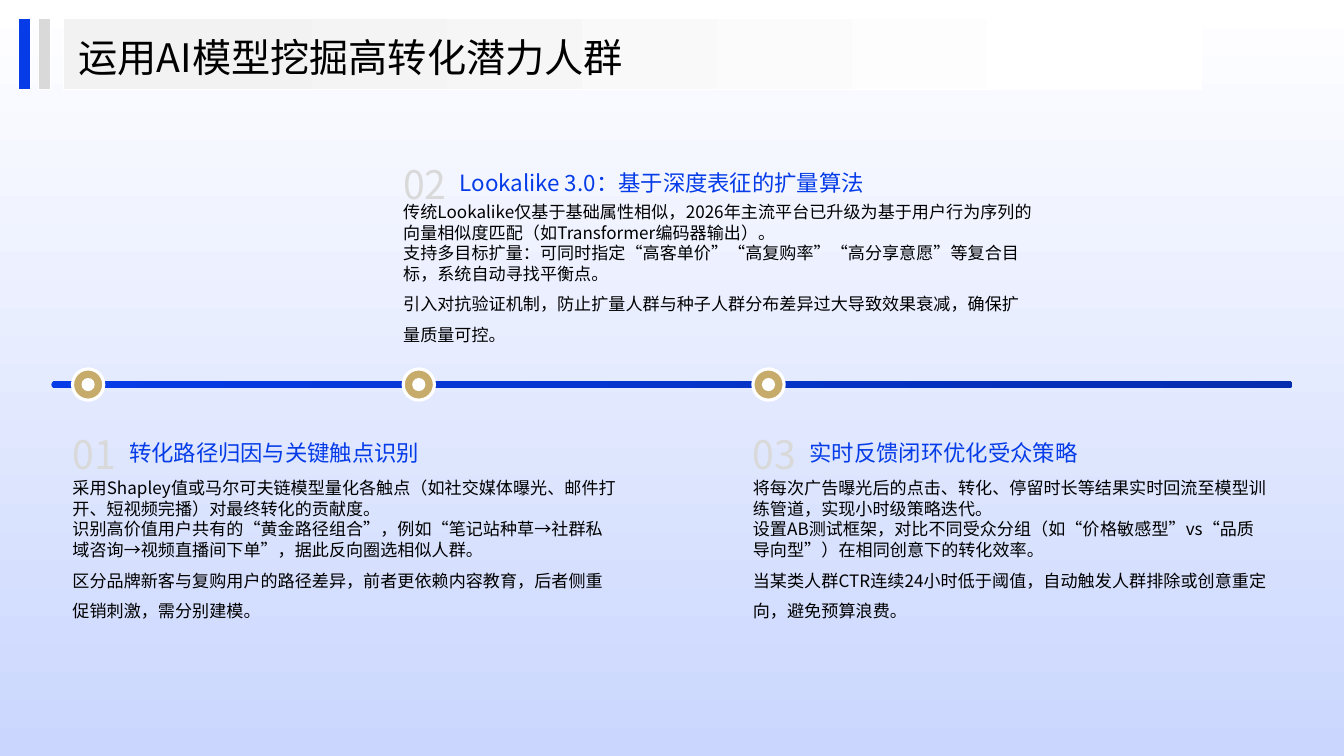
"""Build the timeline slide on finding high-conversion audiences with AI models."""
from dataclasses import dataclass

from pptx import Presentation
from pptx import util as u
from pptx.dml.color import RGBColor
from pptx.enum import shapes, text
from pptx.oxml.ns import qn

Pt = u.Pt
KIND = shapes.MSO_SHAPE


@dataclass(frozen=True)
class Theme:
    """Colours, font and type sizes of the slide."""
    font: str = "Noto Sans CJK SC"
    blue: str = "063CE8"
    deep_blue: str = "052DAE"
    pale_blue: str = "CAD6FE"
    gold: str = "C6AB6A"
    grey: str = "D9D9D9"
    light_grey: str = "F2F2F2"
    white: str = "FFFFFF"
    black: str = "000000"
    title: float = 28
    number: float = 28
    heading: float = 16
    body: float = 12.2


T = Theme()
W, H = 960, 540
AXIS_Y = 274.7

STEPS = [
    dict(number="01", left=51.8, top=310.3, width=388.8, body_top=341.3, body_height=154.8,
         heading="转化路径归因与关键触点识别",
         body=["采用Shapley值或马尔可夫链模型量化各触点（如社交媒体曝光、邮件打开、短视频完播）对最终转化的贡献度。",
               "识别高价值用户共有的“黄金路径组合”，例如“笔记站种草→社群私域咨询→视频直播间下单”，据此反向圈选相似人群。",
               "区分品牌新客与复购用户的路径差异，前者更依赖内容教育，后者侧重促销刺激，需分别建模。"]),
    dict(number="02", left=288, top=117.4, width=450, body_top=144, body_height=110.2,
         heading="Lookalike 3.0：基于深度表征的扩量算法",
         body=["传统Lookalike仅基于基础属性相似，2026年主流平台已升级为基于用户行为序列的向量相似度匹配（如Transformer编码器输出）。",
               "支持多目标扩量：可同时指定“高客单价”“高复购率”“高分享意愿”等复合目标，系统自动寻找平衡点。",
               "引入对抗验证机制，防止扩量人群与种子人群分布差异过大导致效果衰减，确保扩量质量可控。"]),
    dict(number="03", left=537.8, top=310.3, width=369.4, body_top=341.3, body_height=154.8,
         heading="实时反馈闭环优化受众策略",
         body=["将每次广告曝光后的点击、转化、停留时长等结果实时回流至模型训练管道，实现小时级策略迭代。",
               "设置AB测试框架，对比不同受众分组（如“价格敏感型”vs“品质导向型”）在相同创意下的转化效率。",
               "当某类人群CTR连续24小时低于阈值，自动触发人群排除或创意重定向，避免预算浪费。"]),
]


def rgb(value):
    """Turn a hex string into a colour."""
    return RGBColor.from_string(value)


def add_shape(s, kind, box, fill, line=None, line_width=1):
    """Add a preset shape with a solid fill and an optional outline."""
    sp = s.shapes.add_shape(kind, *map(Pt, box))
    sp.shadow.inherit = False
    sp.fill.solid()
    sp.fill.fore_color.rgb = rgb(fill)
    if line:
        sp.line.color.rgb = rgb(line)
        sp.line.width = Pt(line_width)
    else:
        sp.line.fill.background()
    return sp


def set_gradient(sp, start, end, angle=0, positions=(0, 1)):
    """Replace a shape's fill with a two-stop linear gradient."""
    sp.fill.gradient()
    sp.fill.gradient_angle = angle
    for stop, color, position in zip(sp.fill.gradient_stops, (start, end), positions):
        stop.color.rgb = rgb(color)
        stop.position = position


def add_text(s, box, lines, size, color, spacings=(1.1,), anchor=text.MSO_ANCHOR.MIDDLE):
    """Add a text box without margins, one paragraph per line."""
    tf = s.shapes.add_textbox(*map(Pt, box)).text_frame
    tf.word_wrap = True
    tf.vertical_anchor = anchor
    tf.margin_left = tf.margin_right = tf.margin_top = tf.margin_bottom = 0
    for i, (line, spacing) in enumerate(zip(lines, spacings)):
        p = tf.add_paragraph() if i else tf.paragraphs[0]
        p.line_spacing = spacing
        r = p.add_run()
        r.text = line
        r.font.size = Pt(size)
        r.font.name = T.font
        r.font.color.rgb = rgb(color)
        ea = r.font._element.makeelement(qn("a:ea"), {"typeface": T.font})
        r.font._element.find(qn("a:latin")).addnext(ea)


def add_step(s, number, left, top, width, heading, body, body_top, body_height):
    """Add the number, heading and body text of one step."""
    indent, height = 40.4, 24.5
    single, loose = Pt(T.body * 1.2), Pt(T.body * 1.8)
    add_text(s, (left, body_top, width, body_height), body, T.body, T.black,
             (single, single, loose), text.MSO_ANCHOR.TOP)
    add_text(s, (left + indent, top, width - indent, height), [heading], T.heading, T.blue)
    add_text(s, (left, top, indent, height), [number], T.number, T.grey)


def add_node(s, left):
    """Add a ringed marker centred on the timeline."""
    outer, inner = 22.3, 9.4
    center = left + outer / 2
    for size, fill, line in ((outer, T.gold, T.white), (inner, T.white, None)):
        box = (center - size / 2, AXIS_Y - size / 2, size, size)
        add_shape(s, KIND.OVAL, box, fill, line, 2.25)


def add_axis(s):
    """Add the rounded timeline bar."""
    height = 5.4
    bar = add_shape(s, KIND.ROUNDED_RECTANGLE, (36.7, AXIS_Y - height / 2, 886.3, height), T.blue)
    bar.adjustments[0] = 0.5
    set_gradient(bar, T.blue, T.deep_blue)


def add_header(s):
    """Add the title band with its two accent bars."""
    top, height = 13, 51.1
    band = add_shape(s, KIND.RECTANGLE, (45.4, top, 812.9, height), T.white, T.white)
    set_gradient(band, T.light_grey, T.white, positions=(0.1, 0.93))
    add_text(s, (56.2, 20.9, 597.6, 36.7), ["运用AI模型挖掘高转化潜力人群"], T.title, T.black)
    for left, color in ((13, T.blue), (27.4, T.grey)):
        add_shape(s, KIND.RECTANGLE, (left, top, 8.6, height), color, T.white)


def main():
    """Build the slide and save it."""
    prs = Presentation()
    prs.slide_width, prs.slide_height = Pt(W), Pt(H)
    s = prs.slides.add_slide(prs.slide_layouts[6])
    backdrop = add_shape(s, KIND.RECTANGLE, (0, 0, W, H), T.white)
    set_gradient(backdrop, T.white, T.pale_blue, angle=270)
    for step in STEPS:
        add_step(s, **step)
    add_axis(s)
    for step in STEPS:
        add_node(s, step["left"])
    add_header(s)
    prs.save("out.pptx")


if __name__ == "__main__":
    main()
